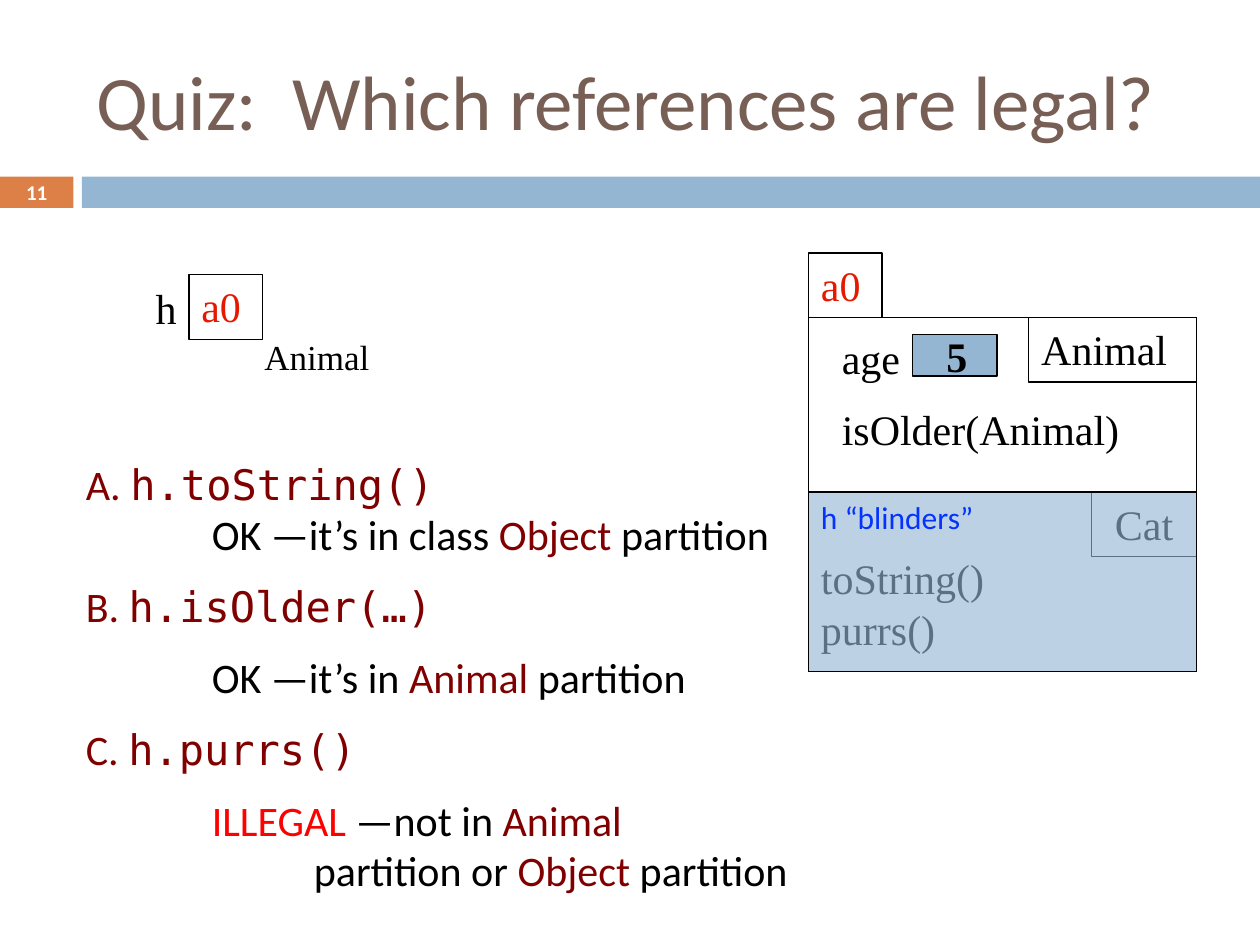
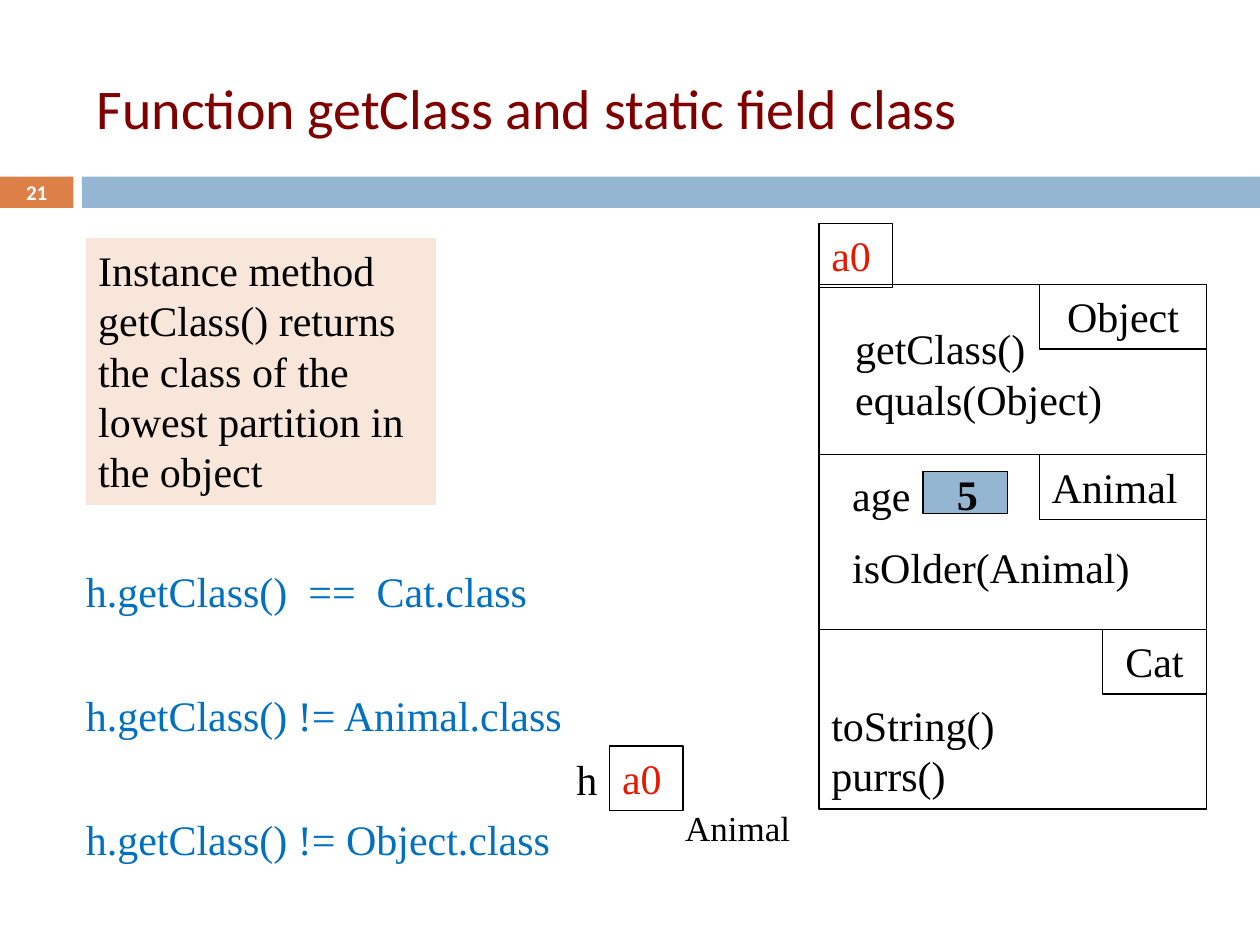
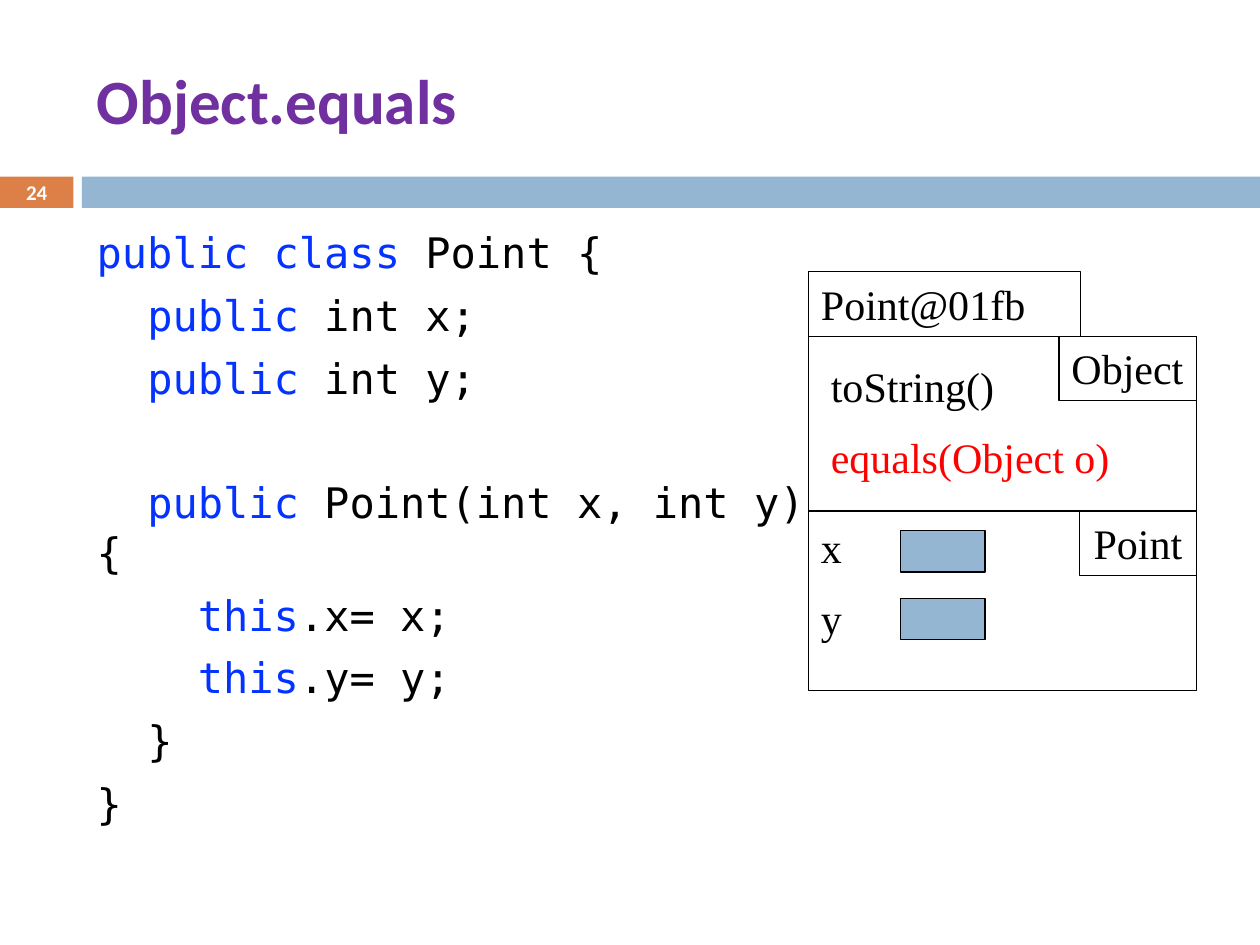
from lxml import etree
from pptx import Presentation
from pptx import util as u
from pptx.dml import color
from pptx.enum import shapes, text
from pptx.oxml import ns

# Shared style
SANS, SERIF, MONO = "Calibri", "Times New Roman", "DejaVu Sans Mono"
BLACK, WHITE, BLUE, ORANGE = "000000", "FFFFFF", "94B6D2", "DD8047"
MAROON, RED, ADDRESS, KEYWORD = "800000", "FF0000", "E41900", "0432FF"
LEFT, CENTER, RIGHT = (text.PP_ALIGN.LEFT, text.PP_ALIGN.CENTER,
                       text.PP_ALIGN.RIGHT)
TOP, MIDDLE = text.MSO_ANCHOR.TOP, text.MSO_ANCHOR.MIDDLE

# Object diagram, in cm
BOX_W, BOX_H, TAB_H, SPLIT = 7.82, 7.14, 1.3, 3.52
FIELD_W, FIELD_H = 1.7, 0.84


def rgb(value):
    return color.RGBColor.from_string(value)


def place(x, y, w, h):
    return [u.Cm(v) for v in (x, y, w, h)]


def para(*runs, before=0, margin=0, indent=0):
    """A paragraph: runs are strings or (string, format) pairs."""
    return {"runs": [r if isinstance(r, tuple) else (r, {}) for r in runs],
            "before": before, "margin": margin, "indent": indent}


def write(sp, paras, align=LEFT, anchor=TOP, **fmt):
    base = {"name": SERIF, "size": 24, "bold": False, "color": BLACK, **fmt}
    tf = sp.text_frame
    tf.word_wrap, tf.vertical_anchor = True, anchor
    if isinstance(paras, str):
        paras = [para(paras)]
    for i, item in enumerate(paras):
        p = tf.add_paragraph() if i else tf.paragraphs[0]
        p.alignment, p.space_before = align, u.Pt(item["before"])
        pPr = p._p.get_or_add_pPr()
        for key, name in (("margin", "marL"), ("indent", "indent")):
            pPr.set(name, str(u.Cm(item[key])))
        for words, own in item["runs"]:
            r = p.add_run()
            r.text = words
            look = {**base, **own}
            r.font.color.rgb = rgb(look.pop("color"))
            look["size"] = u.Pt(look["size"])
            for attr, value in look.items():
                setattr(r.font, attr, value)


def label(s, x, y, w, h, paras, **fmt):
    write(s.shapes.add_textbox(*place(x, y, w, h)), paras, **fmt)


def rect(s, x, y, w, h, paras=None, fill=None, line=BLACK, **fmt):
    sp = s.shapes.add_shape(shapes.MSO_SHAPE.RECTANGLE, *place(x, y, w, h))
    sp.shadow.inherit = False
    if fill:
        sp.fill.solid()
        sp.fill.fore_color.rgb = rgb(fill)
    else:
        sp.fill.background()
    if line:
        sp.line.color.rgb, sp.line.width = rgb(line), u.Pt(0.75)
    else:
        sp.line.fill.background()
    if paras:
        write(sp, paras, **fmt)
    return sp


def set_alpha(sp, percent):
    clr = sp.fill._xPr.find(".//" + ns.qn("a:srgbClr"))
    etree.SubElement(clr, ns.qn("a:alpha"), val=str(percent * 1000))


def rule(s, x, y, w):
    c = s.shapes.add_connector(shapes.MSO_CONNECTOR.STRAIGHT,
                               *place(x, y, x + w, y))
    c.line.color.rgb, c.line.width = rgb(BLACK), u.Pt(0.75)
    etree.SubElement(c._element.spPr, ns.qn("a:effectLst"))


def new_slide(prs, number, title, y=0.64, h=2.74, **fmt):
    """Blank slide with the bands, the page number and the title."""
    s = prs.slides.add_slide(prs.slide_layouts[6])
    rect(s, 0, 3.56, 1.48, 0.63, fill=ORANGE, line=None)
    rect(s, 1.65, 3.56, 23.75, 0.63, fill=BLUE, line=None)
    label(s, 0, 3.53, 1.48, 0.69, number, align=CENTER, anchor=MIDDLE,
          name=SANS, size=12, bold=True, color=WHITE)
    label(s, 1.7, y, 22.66, h, title, anchor=MIDDLE, name=SANS, **fmt)
    return s


# Object diagrams
def class_tab(s, x, y, w, name, align=LEFT):
    """Class name in the top right corner of a partition."""
    rect(s, x + BOX_W - w, y, w, TAB_H, name, align=align)


def object_box(s, x, y, upper, lower):
    """Frame of two partitions; upper and lower are (name, tab width)."""
    rect(s, x, y, BOX_W, BOX_H, fill=WHITE)
    class_tab(s, x, y, upper[1], upper[0])
    class_tab(s, x, y + SPLIT, lower[1], lower[0], CENTER)
    rule(s, x, y + SPLIT, 6.13)


def address(s, x, y, value="a0", w=1.48, **fmt):
    rect(s, x, y, w, TAB_H, value, **{"color": ADDRESS, **fmt})


def field(s, x, y):
    rect(s, x, y, FIELD_W, FIELD_H, fill=BLUE)


def cat_object(s, x, y, methods_dy):
    object_box(s, x, y, ("Animal", 3.38), ("Cat", 2.11))
    label(s, x, y + methods_dy, 7.62, 2.31,
          [para("toString()"), para("purrs()")])
    label(s, x + 0.42, y + 0.18, 7.42, 2.82,
          [para("age"), para("isOlder(Animal)", before=12)])
    field(s, x + 2.1, y + 0.34)
    label(s, x + 2.53, y + 0.14, 0.84, TAB_H, "5", bold=True)


def variable(s, x, y):
    """Variable h of type Animal; x, y is the corner of its value box."""
    label(s, x - 1.07, y + 0.03, 1.07, 1.27, "h", align=RIGHT)
    address(s, x, y)
    label(s, x + 1.27, y + 1.09, 3, 1.12, "Animal", size=20)


# Slides
def quiz_slide(prs):
    s = new_slide(prs, "11", "Quiz:  Which references are legal?",
                  size=44, color="775F55")
    variable(s, 3.81, 5.54)
    black, mono = {"color": BLACK}, {"name": MONO}
    answers = [
        para("A. ", ("h.toString()", mono)),
        para(("OK —it’s in class ", black), "Object ", ("partition", black),
             margin=2.54),
        para("B. ", ("h.isOlder(…)", mono), before=12),
        para(("OK —it’s in ", black), "Animal", (" partition", black),
             before=12, margin=2.54),
        para("C. ", ("h.purrs()", mono), before=12),
        para(("ILLEGAL", {"color": RED}), (" —not in ", black), "Animal",
             before=12, margin=2.54),
        para(("partition or ", black), "Object", (" partition", black),
             margin=4.6),
    ]
    label(s, 1.48, 9.12, 16.3, 9.14, answers, name=SANS, color=MAROON)
    x, y = 16.3, 6.4
    address(s, x, y - TAB_H)
    cat_object(s, x, y, 4.62)
    blinders = rect(s, x, y + SPLIT, BOX_W, BOX_H - SPLIT, "h “blinders”",
                    fill=BLUE, name=SANS, size=18, color=KEYWORD)
    set_alpha(blinders, 62)


def get_class_slide(prs):
    s = new_slide(prs, "21", "Function getClass and static field class",
                  y=1.09, h=2.13, size=32, color=MAROON)
    tests = ["h.getClass()  ==  Cat.class", "h.getClass() != Animal.class",
             "h.getClass() != Object.class"]
    label(s, 1.48, 11.28, 14.6, 6.7,
          [para(t, before=42 if i else 0) for i, t in enumerate(tests)],
          color="0070C0")
    x, y = 16.51, 9.17
    cat_object(s, x, y, 4.8)
    variable(s, 12.29, 15.04)
    # Object partition on top of the frame
    top = 5.74
    address(s, x, top - 1.24)
    rect(s, x, top, BOX_W, y - top)
    class_tab(s, x, top, 3.38, "Object", CENTER)
    label(s, x + 0.48, top + 0.64, 5.6, 2.31,
          [para("getClass()"), para("equals(Object)")])
    rect(s, 1.73, 4.8, 7.06, 5.38,
         "Instance method getClass() returns the class of the lowest "
         "partition in the object", fill="F8E6DA", line=None)


def equals_slide(prs):
    s = new_slide(prs, "24", "Object.equals", size=36, bold=True,
                  color="7030A0")
    x, y = 16.3, 6.78
    object_box(s, x, y, ("Object", 2.77), ("Point", 2.36))
    address(s, x, y - TAB_H, "Point@01fb", 5.49, color=BLACK)
    label(s, x, y + 3.61, 5.49, 2.82, [para("x"), para("y", before=12)])
    label(s, x + 0.2, y + 0.36, 7.42, 2.82,
          [para("toString()"),
           para(("equals(Object o)", {"color": RED}), before=12)])
    # Code lines: indent level, keyword, rest, space before
    code = [(0, "public class", " Point {", 0),
            (1, "public", " int x;", 7),
            (1, "public", " int y;", 7),
            (1, "public", " Point(int x, int y) {", 42),
            (2, "this", ".x= x;", 7),
            (2, "this", ".y= y;", 7),
            (1, "", "}", 7),
            (0, "", "}", 7)]
    lines = []
    for level, word, rest, before in code:
        runs = [(word, {"color": KEYWORD})] if word else []
        lines.append(para(*runs, rest, before=before, indent=level * 1.02))
    label(s, 1.7, 4.45, 15.44, 13.54, lines, name=MONO)
    for row in range(2):
        field(s, 18.16, 10.69 + row * 1.37)


def main():
    prs = Presentation()
    prs.slide_width, prs.slide_height = u.Cm(25.4), u.Cm(19.05)
    quiz_slide(prs)
    get_class_slide(prs)
    equals_slide(prs)
    prs.save("out.pptx")


if __name__ == "__main__":
    main()
